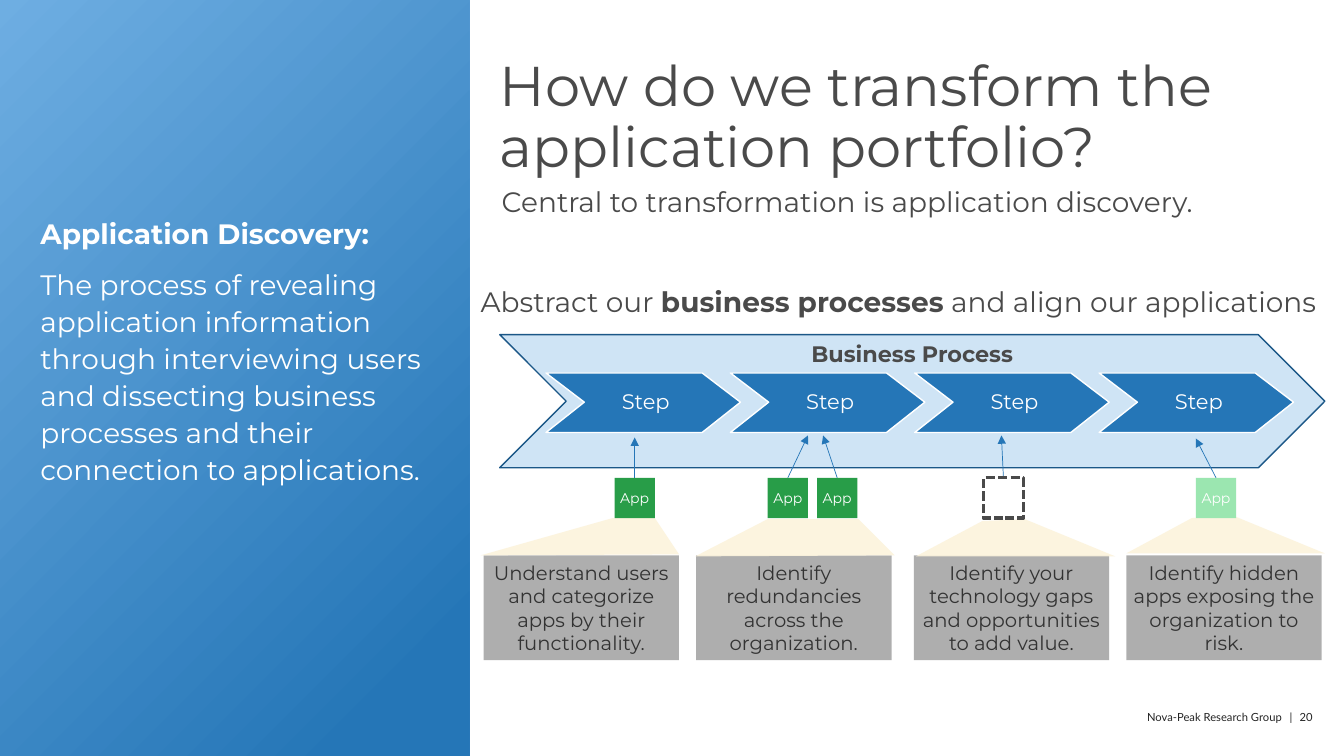
"""Build the application portfolio transformation slide."""
import pptx
import pptx.dml.color
import pptx.enum.dml
import pptx.enum.shapes
import pptx.enum.text
import pptx.oxml.xmlchemy
import pptx.util
from pptx.oxml.ns import qn

RGB = pptx.dml.color.RGBColor
SHAPE = pptx.enum.shapes.MSO_SHAPE
ALIGN = pptx.enum.text.PP_ALIGN
ANCHOR = pptx.enum.text.MSO_ANCHOR

WHITE = RGB(0xFF, 0xFF, 0xFF)
INK = RGB(0x4A, 0x4A, 0x4A)
BOX_INK = RGB(0x33, 0x33, 0x33)
FOOTER_INK = RGB(0x24, 0x24, 0x24)
SKY = RGB(0x6E, 0xAE, 0xE2)
BLUE = RGB(0x25, 0x76, 0xB7)
NAVY = RGB(0x1B, 0x57, 0x87)
PALE_BLUE = RGB(0xCF, 0xE4, 0xF5)
GREEN = RGB(0x28, 0x9D, 0x48)
PALE_GREEN = RGB(0x9B, 0xE6, 0xB0)
GREY = RGB(0xA6, 0xA6, 0xA6)
CREAM = RGB(0xFC, 0xF3, 0xDC)

PX = 9144
FONT = "Montserrat"
TITLE = "How do we transform the application portfolio?"
SUBTITLE = "Central to transformation is application discovery."
DEFINITION = [
    ("Application Discovery:", True),
    ("The process of revealing application information through interviewing users "
     "and dissecting business processes and their connection to applications.", False),
]
HEADING = [("Abstract our ", False), ("business processes", True),
           (" and align our applications", False)]
FOOTER = [("Nova-Peak Research Group", 0), (" ", 320), ("|", 0), (" ", 320), ("20", 0)]

STEP_COUNT, STEP_LEFT, STEP_PITCH = 4, 542, 183
STEP_TOP, STEP_W, STEP_H, STEP_NOTCH = 370, 193, 59, 38
BOX_TOP, BOX_W, BOX_H = 551, 194, 104
APP_TOP, APP_SIZE = 474, 40
BOXES = [
    (480, "Understand users and categorize apps by their functionality."),
    (691, "Identify redundancies across the organization."),
    (907, "Identify your technology gaps and opportunities to add value."),
    (1118, "Identify hidden apps exposing the organization to risk."),
]
APPS = [
    (610, GREEN, (630, 434)),
    (762, GREEN, (802, 432)),
    (811, GREEN, (817, 432)),
    (976, None, (994, 432)),
    (1187, PALE_GREEN, (1187, 435)),
]
BEAMS = [
    [(608, 514), (650, 514), (674, 550), (477, 551)],
    [(762, 515), (852, 515), (888, 551), (690, 552)],
    [(975, 517), (1017, 515), (1107, 552), (909, 552)],
    [(1183, 514), (1225, 512), (1315, 549), (1118, 549)],
]

prs = pptx.Presentation()
prs.slide_width, prs.slide_height = 1334 * PX, 750 * PX
shapes = prs.slides.add_slide(prs.slide_layouts[6]).shapes


def style(sp, fill, line=None, width=1, alpha=None):
    """Set fill, outline and opacity, without a shadow."""
    sp.shadow.inherit = False
    sp.fill.solid()
    sp.fill.fore_color.rgb = fill
    if alpha:
        color = sp.fill._xPr.find(qn("a:solidFill"))[0]
        color.append(pptx.oxml.xmlchemy.OxmlElement("a:alpha"))
        color[0].set("val", str(alpha * 1000))
    if line is None:
        sp.line.fill.background()
    else:
        sp.line.color.rgb = line
        sp.line.width = pptx.util.Pt(width)
    return sp


def preset(kind, x, y, w, h, *look, **kwargs):
    sp = shapes.add_shape(kind, x * PX, y * PX, w * PX, h * PX)
    return style(sp, *look, **kwargs)


def polygon(points, *look, **kwargs):
    builder = shapes.build_freeform(*points[0], scale=PX)
    builder.add_line_segments(points[1:])
    return style(builder.convert_to_shape(), *look, **kwargs)


def write(sp, paragraphs, size, color, align=ALIGN.LEFT, anchor=ANCHOR.TOP,
          margins=(0, 0, 0, 0), spacing=1.0, before=0, font=FONT):
    """Fill a shape with paragraphs, each a list of (text, bold) runs."""
    tf = sp.text_frame
    tf.word_wrap = True
    tf.vertical_anchor = anchor
    tf.margin_left, tf.margin_top, tf.margin_right, tf.margin_bottom = (m * PX for m in margins)
    for i, runs in enumerate(paragraphs):
        p = tf.add_paragraph() if i else tf.paragraphs[0]
        p.alignment, p.line_spacing = align, spacing
        p.space_before = pptx.util.Pt(before)
        p.font.name, p.font.size = font, pptx.util.Pt(size)
        p.font.color.rgb = color
        for text, bold in runs:
            r = p.add_run()
            r.text = text
            if bold:
                r.font.bold = True
    return tf


def textbox(x, y, w, h, *args, **kwargs):
    return write(shapes.add_textbox(x * PX, y * PX, w * PX, h * PX), *args, **kwargs)


def arrow(start, end):
    c = shapes.add_connector(pptx.enum.shapes.MSO_CONNECTOR.STRAIGHT,
                             *(v * PX for v in start + end))
    c.line.color.rgb = BLUE
    c.line.width = pptx.util.Pt(0.5)
    tail = pptx.oxml.xmlchemy.OxmlElement("a:tailEnd")
    tail.set("type", "triangle")
    c.line._get_or_add_ln().append(tail)
    c._element.spPr.append(pptx.oxml.xmlchemy.OxmlElement("a:effectLst"))


panel = preset(SHAPE.RECTANGLE, 0, 0, 466, 750, SKY)
panel.fill.gradient()
panel.fill.gradient_angle = 315
for stop, (position, color) in zip(panel.fill.gradient_stops, [(0, SKY), (0.89, BLUE)]):
    stop.position = position
    stop.color.rgb = color

textbox(40, 104, 389, 485, [[run] for run in DEFINITION], 20, WHITE,
        anchor=ANCHOR.MIDDLE, spacing=1.1, before=10)
textbox(496, 58, 728, 124, [[(TITLE, False)]], 40, INK, spacing=0.9)
textbox(498, 180, 802, 50, [[(SUBTITLE, False)]], 20, INK, spacing=1.1, before=10)
textbox(477, 279, 857, 40, [HEADING], 20, INK, spacing=1.1, before=10)

process = preset(SHAPE.CHEVRON, 496, 332, 819, 132, PALE_BLUE, NAVY)
write(process, [[("Business Process", True)]], 16, INK, ALIGN.CENTER, margins=(10, 5, 10, 5))

for i in range(STEP_COUNT):
    left = STEP_LEFT + i * STEP_PITCH
    right, middle, bottom = left + STEP_W, STEP_TOP + STEP_H // 2, STEP_TOP + STEP_H
    step = polygon([(left, STEP_TOP), (right - STEP_NOTCH, STEP_TOP), (right, middle),
                    (right - STEP_NOTCH, bottom), (left, bottom),
                    (left + STEP_NOTCH, middle)], BLUE, WHITE)
    write(step, [[("Step", False)]], 15, WHITE, ALIGN.CENTER, ANCHOR.MIDDLE,
          (36, 2, 31, 2), 0.9)

for left, text in BOXES:
    box = preset(SHAPE.RECTANGLE, left, BOX_TOP, BOX_W, BOX_H, GREY, alpha=90)
    write(box, [[(text, False)]], 14, BOX_INK, ALIGN.CENTER, ANCHOR.MIDDLE, (4, 5, 4, 5))

for points in BEAMS:
    polygon(points, CREAM, alpha=90)

for left, color, target in APPS:
    arrow((left + APP_SIZE // 2, APP_TOP), target)
    square = (SHAPE.RECTANGLE, left, APP_TOP, APP_SIZE, APP_SIZE)
    if color is None:
        gap = preset(*square, WHITE, INK, 2.25)
        gap.line.dash_style = pptx.enum.dml.MSO_LINE.SQUARE_DOT
    else:
        write(preset(*square, color), [[("App", False)]], 10, WHITE,
              ALIGN.CENTER, ANCHOR.MIDDLE, (0, 5, 0, 5))

footer = textbox(1000, 705, 303, 14, [[(text, False) for text, _ in FOOTER]], 8,
                 FOOTER_INK, ALIGN.RIGHT, font="Lato")
for r, (_, tracking) in zip(footer.paragraphs[0].runs, FOOTER):
    if tracking:
        r.font._element.set("spc", str(tracking))

prs.save("out.pptx")
